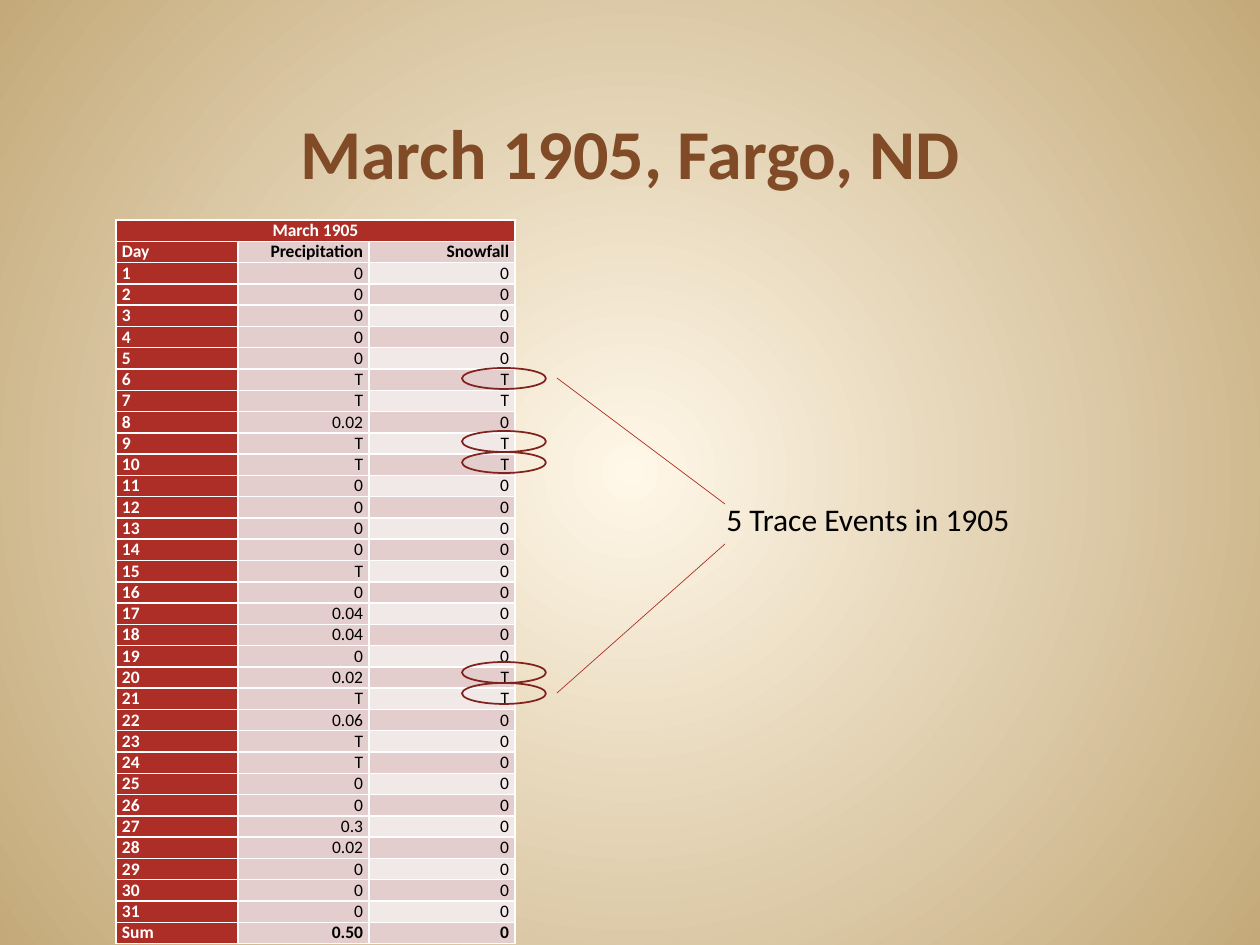
import pptx
import pptx.dml.color
import pptx.enum.shapes
import pptx.enum.text
import pptx.oxml
import pptx.oxml.ns
import pptx.util

PX = 914400 / 126
FONT = "Calibri"
COLORS = {
    "center": "FFF7E8",
    "edge": "C4AA7A",
    "title": "804B26",
    "red": "AD2E27",
    "dark_red": "80221D",
    "band": "E3CDCD",
    "light_band": "F1E8E8",
    "white": "FFFFFF",
    "black": "000000",
}
PRECIPITATION = (
    "0 0 0 0 0 T T 0.02 T T 0 0 0 0 T 0 0.04 0.04 0 0.02 T "
    "0.06 T T 0 0 0.3 0.02 0 0 0"
).split()
SNOW_TRACE_DAYS = (6, 7, 9, 10, 20, 21)
CIRCLED_DAYS = (6, 9, 10, 20, 21)
ALIGN = pptx.enum.text.PP_ALIGN
ANCHOR = pptx.enum.text.MSO_ANCHOR


def emu(*lengths):
    return [pptx.util.Emu(round(length * PX)) for length in lengths]


def color(name):
    return pptx.dml.color.RGBColor.from_string(COLORS[name])


def write(frame, text, size, color_name, bold=False, align=ALIGN.LEFT):
    para = frame.paragraphs[0]
    para.alignment = align
    span = para.add_run()
    span.text = text
    span.font.name = FONT
    span.font.size = pptx.util.Pt(size)
    span.font.bold = bold
    span.font.color.rgb = color(color_name)


def paint_background(page):
    page.background.fill.solid()
    properties = page.element.xpath("//p:bgPr")[0]
    gradient = pptx.oxml.parse_xml(
        f'<a:gradFill {pptx.oxml.ns.nsdecls("a")} rotWithShape="1"><a:gsLst>'
        f'<a:gs pos="0"><a:srgbClr val="{COLORS["center"]}"/></a:gs>'
        f'<a:gs pos="100000"><a:srgbClr val="{COLORS["edge"]}"/></a:gs>'
        '</a:gsLst><a:path path="circle">'
        '<a:fillToRect l="50000" t="50000" r="50000" b="50000"/>'
        '</a:path></a:gradFill>'
    )
    properties.replace(properties[0], gradient)


def place_title(page, box):
    title = page.shapes.title
    title.left, title.top, title.width, title.height = emu(*box)
    title.text_frame.vertical_anchor = ANCHOR.BOTTOM
    write(title.text_frame, "March 1905, Fargo, ND", 40, "title", True, ALIGN.CENTER)


def fill_cell(cell, text, fill, text_color, bold, align):
    cell.margin_left, cell.margin_right = emu(6, 6)
    cell.margin_top = cell.margin_bottom = 0
    cell.vertical_anchor = ANCHOR.BOTTOM
    cell.fill.solid()
    cell.fill.fore_color.rgb = color(fill)
    write(cell.text_frame, text, 10, text_color, bold, align)


def place_weather_table(page, box):
    rows = [("Day", "Precipitation", "Snowfall")]
    for day, amount in enumerate(PRECIPITATION, 1):
        rows.append((str(day), amount, "T" if day in SNOW_TRACE_DAYS else "0"))
    rows.append(("Sum", "0.50", "0"))

    table = page.shapes.add_table(len(rows) + 1, 3, *emu(*box)).table
    table.first_col = True
    for column, width in zip(table.columns, emu(122, 131, 146)):
        column.width = width
    for row in table.rows:
        row.height = emu(box[3] / len(table.rows))[0]

    table.cell(0, 0).merge(table.cell(0, 2))
    fill_cell(table.cell(0, 0), "March 1905", "red", "white", True, ALIGN.CENTER)
    for row_number, (label, *amounts) in enumerate(rows, 1):
        fill_cell(table.cell(row_number, 0), label, "red", "white", True, ALIGN.LEFT)
        bold = row_number in (1, len(rows))
        snow_fill = "band" if row_number % 2 else "light_band"
        for column, (amount, fill) in enumerate(zip(amounts, ("band", snow_fill)), 1):
            cell = table.cell(row_number, column)
            fill_cell(cell, amount, fill, "black", bold, ALIGN.RIGHT)


def circle_trace_days(page, box):
    left, top, width, height = box
    for day in CIRCLED_DAYS:
        day_top = top + height * (day - CIRCLED_DAYS[0])
        ring = page.shapes.add_shape(
            pptx.enum.shapes.MSO_SHAPE.OVAL, *emu(left, day_top, width, height)
        )
        ring.shadow.inherit = False
        ring.fill.background()
        ring.line.color.rgb = color("dark_red")
        ring.line.width = pptx.util.Pt(1)


def connect_label(page, box):
    left, top, width, height = box
    for start, end in ((top, top + 126), (top + height, top + 166)):
        line = page.shapes.add_connector(
            pptx.enum.shapes.MSO_CONNECTOR.STRAIGHT,
            *emu(left, start, left + width, end),
        )
        line.line.color.rgb = color("red")
        line.line.width = pptx.util.Pt(0.39)
        properties = line.element.spPr
        properties.append(pptx.oxml.parse_xml(
            f'<a:effectLst {pptx.oxml.ns.nsdecls("a")}/>'
        ))


def place_label(page, box):
    label = page.shapes.add_textbox(*emu(*box))
    label.text_frame.word_wrap = False
    label.text_frame.auto_size = pptx.enum.text.MSO_AUTO_SIZE.SHAPE_TO_FIT_TEXT
    write(label.text_frame, "5 Trace Events in 1905", 18, "black")


def main():
    deck = pptx.Presentation()
    deck.slide_width, deck.slide_height = emu(1260, 945)
    page = deck.slides.add_slide(deck.slide_layouts[5])
    paint_background(page)
    place_title(page, (63, 42, 1134, 158))
    place_weather_table(page, (116, 220, 399, 714))
    circle_trace_days(page, (462, 368, 84, 21))
    connect_label(page, (557, 378, 168, 315))
    place_label(page, (714, 494, 316, 50))
    deck.save("out.pptx")


if __name__ == "__main__":
    main()
